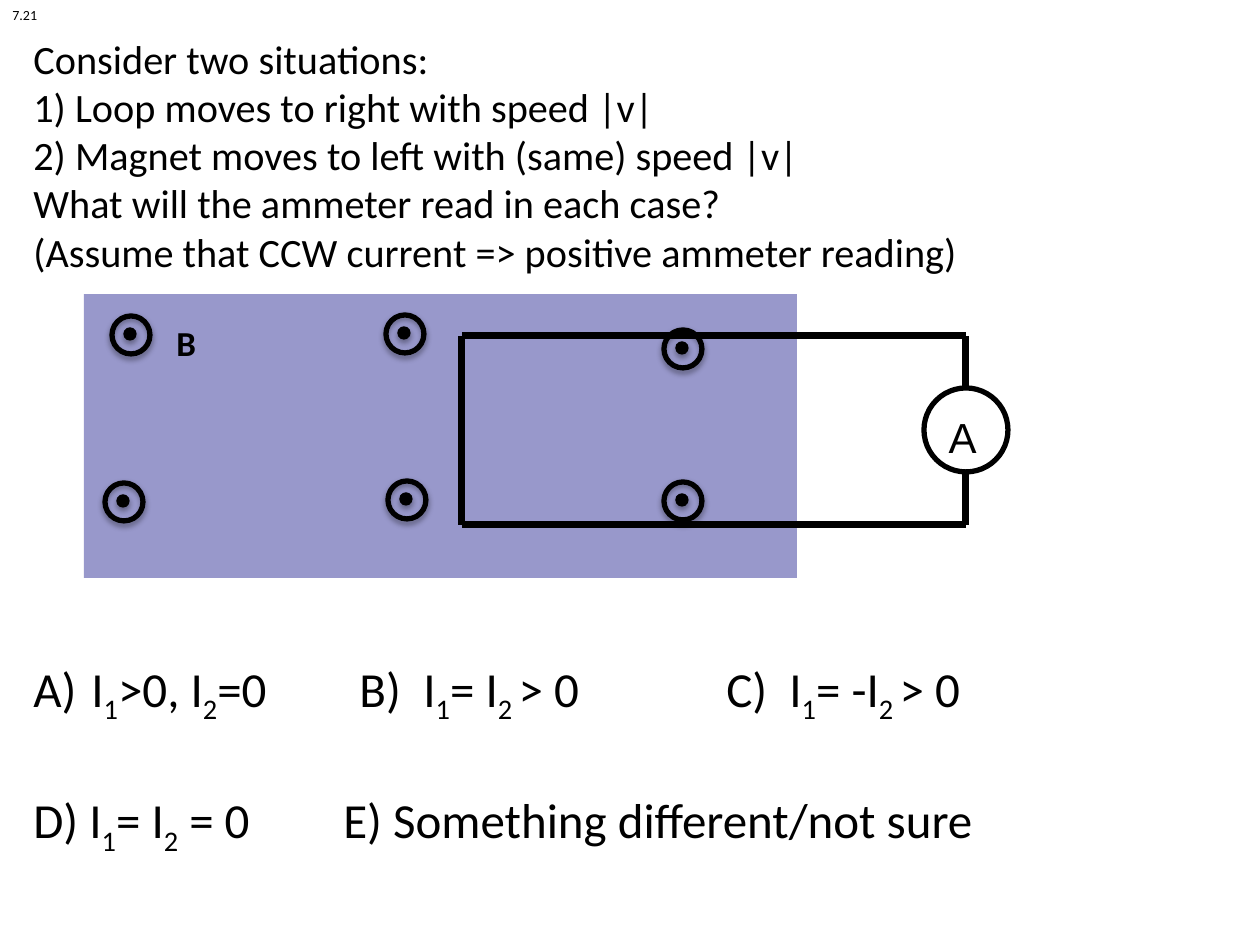
"""Builds the quiz slide on a wire loop and a magnet in relative motion."""
from lxml import etree
from pptx import Presentation
from pptx import util as u
from pptx.dml.color import RGBColor
from pptx.enum import shapes, text
from pptx.oxml.ns import qn

PX = 914400 // 126
COLORS = {"ink": "000000", "field": "333399", "meter": "FFFFFF"}


def add_text(slide, box, lines, size, bold=False, wrap=True):
    shape = slide.shapes.add_textbox(*[v * PX for v in box])
    frame = shape.text_frame
    frame.word_wrap = wrap
    frame.text = "\n".join(lines)
    for paragraph in frame.paragraphs:
        pieces = paragraph.text.split("_")
        paragraph.text = ""
        for index, piece in enumerate(pieces):
            run = paragraph.add_run()
            run.text = piece
            run.font.name = "Calibri"
            run.font.size = u.Pt(size)
            run.font.bold = bold
            run.font.color.rgb = RGBColor.from_string(COLORS["ink"])
            if index % 2:
                run.font._element.set("baseline", "-25000")
    return frame


def add_ellipse(parent, center_x, center_y, diameter, fill, width):
    shape = parent.shapes.add_shape(
        shapes.MSO_SHAPE.OVAL, (center_x - diameter // 2) * PX,
        (center_y - diameter // 2) * PX, diameter * PX, diameter * PX)
    if fill:
        shape.fill.solid()
        shape.fill.fore_color.rgb = RGBColor.from_string(COLORS[fill])
    else:
        shape.fill.background()
    shape.line.color.rgb = RGBColor.from_string(COLORS["ink"])
    shape.line.width = u.Pt(width)
    return shape


presentation = Presentation()
presentation.slide_width = 1260 * PX
presentation.slide_height = 945 * PX
slide = presentation.slides.add_slide(presentation.slide_layouts[6])

question = add_text(slide, (21, 53, 1207, 203), [
    "Consider two situations:",
    "1) Loop moves to right with speed |v|",
    "2) Magnet moves to left with (same) speed |v|",
    "What will the ammeter read in each case?",
    "(Assume that CCW current => positive ammeter reading)",
], 23)
question.vertical_anchor = text.MSO_ANCHOR.MIDDLE

field = slide.shapes.add_shape(
    shapes.MSO_SHAPE.RECTANGLE, 84 * PX, 294 * PX, 713 * PX, 284 * PX)
field.shadow.inherit = False
field.line.fill.background()
field.fill.solid()
field.fill.fore_color.rgb = RGBColor.from_string(COLORS["field"])
field_color = field._element.spPr.find(qn("a:solidFill"))[0]
etree.SubElement(field_color, qn("a:alpha")).set("val", "50000")
add_text(slide, (164, 315, 50, 55), ["B"], 20, bold=True, wrap=False)

for x, y in [(683, 349), (131, 335), (683, 501), (407, 500), (124, 502), (405, 334)]:
    field_vector = slide.shapes.add_group_shape()
    add_ellipse(field_vector, x, y, 38, None, 3)
    add_ellipse(field_vector, x - 1, y - 1, 12, "ink", 0.75)

left, right, top, bottom = 462, 966, 336, 525
meter_y, meter_size = 430, 84
wires = [
    (right, top, left, top),
    (right, bottom, left, bottom),
    (left, top, left, bottom),
    (right, meter_y + meter_size // 2, right, bottom),
    (right, top, right, meter_y - meter_size // 2),
]
circuit = slide.shapes.add_group_shape()
for ends in wires:
    wire = circuit.shapes.add_connector(
        shapes.MSO_CONNECTOR.STRAIGHT, *[v * PX for v in ends])
    wire.line.color.rgb = RGBColor.from_string(COLORS["ink"])
    wire.line.width = u.Pt(4)
    etree.SubElement(wire._element.spPr, qn("a:effectLst"))

ammeter = add_ellipse(circuit, right, meter_y, meter_size, "meter", 3)
ammeter.shadow.inherit = False
ammeter_frame = ammeter.text_frame
ammeter_frame.text = "A"
ammeter_frame.word_wrap = False
ammeter_frame.vertical_anchor = text.MSO_ANCHOR.TOP
ammeter_frame.margin_top = 11 * PX
ammeter_label = ammeter_frame.paragraphs[0]
ammeter_label.alignment = text.PP_ALIGN.LEFT
ammeter_label.font.name = "Arial"
ammeter_label.font.size = u.Pt(24)
ammeter_label.font.color.rgb = RGBColor.from_string(COLORS["ink"])

answers = add_text(slide, (21, 652, 1207, 190), [
    "A)\tI_1_>0, I_2_=0\tB)\tI_1_= I_2 _> 0\tC)\tI_1_= -I_2 _> 0",
    "D) I_1_= I_2_ = 0\tE) Something different/not sure",
], 28)
answers.paragraphs[1].space_before = u.Pt(37)
for paragraph, stops in zip(answers.paragraphs, [(58, 326, 390, 693, 756), (310,)]):
    tab_list = etree.SubElement(paragraph._p.get_or_add_pPr(), qn("a:tabLst"))
    for stop in stops:
        etree.SubElement(tab_list, qn("a:tab"), pos=str(stop * PX), algn="l")

add_text(slide, (0, 0, 50, 30), ["7.21"], 8, wrap=False)

presentation.save("out.pptx")
